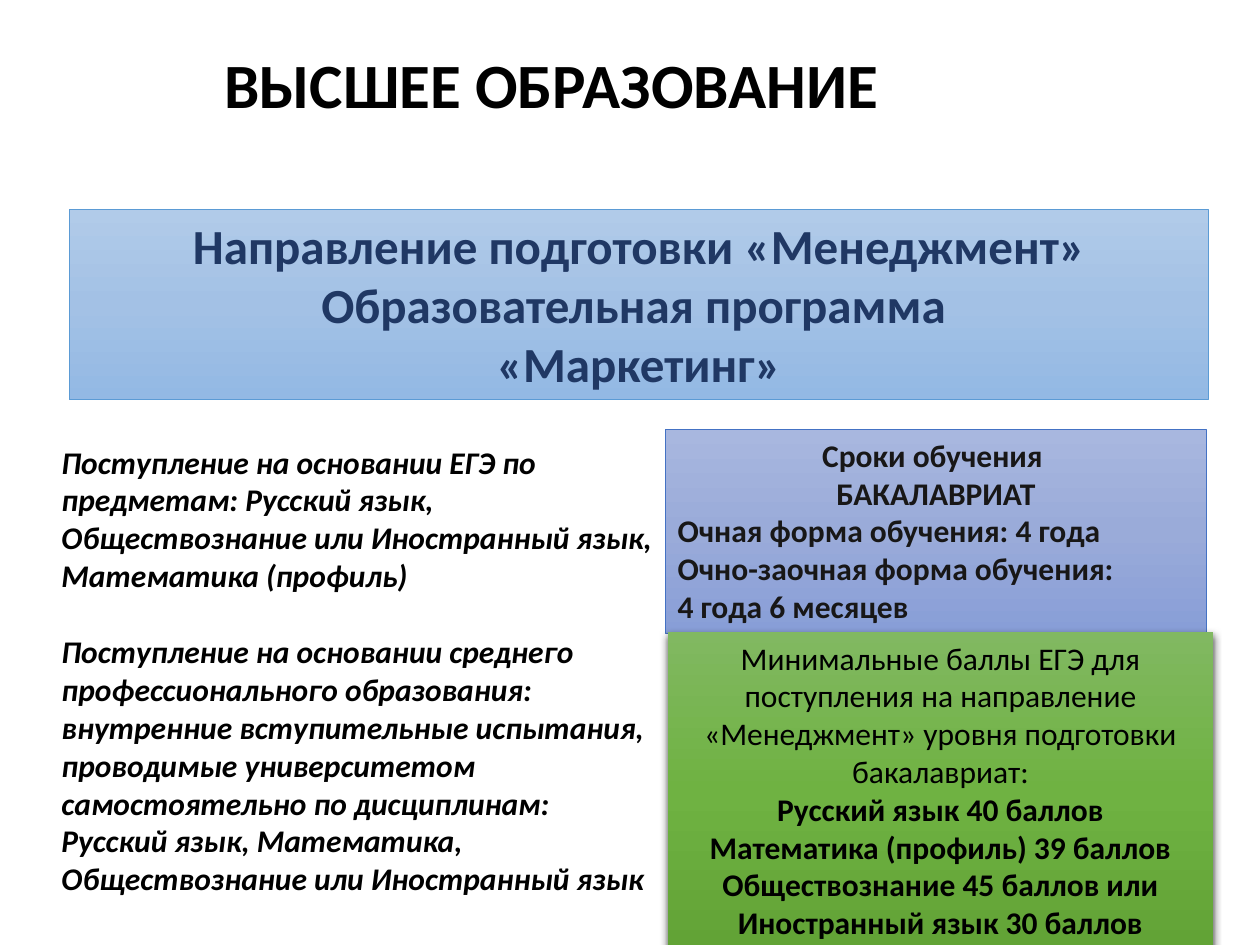
from copy import deepcopy

from lxml import etree
from pptx import Presentation
from pptx import util as u
from pptx.dml.color import RGBColor
from pptx.enum import shapes, text
from pptx.oxml import ns

COLORS = {
    "black": "000000",
    "ink": "181717",
    "navy": "203864",
    "sky_line": "5B9BD5",
    "indigo_line": "4472C4",
}
GRADIENTS = {
    "sky": ("B1CBE9", "A3C1E5", "93B9E4"),
    "indigo": ("A8B7DF", "9AABD9", "889ED7"),
    "green": ("81B861", "6FB242", "62A336"),
}


def write(frame, words, size=18, color="black", bold=True, italic=False,
          align=text.PP_ALIGN.CENTER, before=0, spacing=None):
    first = frame.paragraphs[0]
    paragraph = first if not first.runs else frame.add_paragraph()
    paragraph.alignment = align
    paragraph.space_before = u.Pt(before)
    if spacing:
        paragraph.line_spacing = spacing
    run = paragraph.add_run()
    run.text = words
    font = run.font
    font.name = "Calibri"
    font.size = u.Pt(size)
    font.bold = bold
    font.italic = italic
    font.color.rgb = RGBColor.from_string(COLORS[color])


class SlideBuilder:
    def __init__(self, slide):
        self.slide = slide

    def text_box(self, left, top, width, height, anchor=text.MSO_ANCHOR.TOP):
        box = self.slide.shapes.add_textbox(*map(u.Cm, (left, top, width, height)))
        return self.prepare(box.text_frame, anchor)

    def panel(self, left, top, width, height, gradient, line=None, shadow=False):
        panel = self.slide.shapes.add_shape(
            shapes.MSO_SHAPE.RECTANGLE, *map(u.Cm, (left, top, width, height)))
        panel.shadow.inherit = False
        self.fill_gradient(panel, GRADIENTS[gradient])
        if line:
            panel.line.color.rgb = RGBColor.from_string(COLORS[line])
            panel.line.width = u.Pt(0.5)
        else:
            panel.line.fill.background()
        if shadow:
            self.drop_shadow(panel)
        return self.prepare(panel.text_frame, text.MSO_ANCHOR.TOP)

    def prepare(self, frame, anchor):
        frame.word_wrap = True
        frame.vertical_anchor = anchor
        return frame

    def fill_gradient(self, panel, colors):
        panel.fill.gradient()
        panel.fill.gradient_angle = 270
        stop_list = panel.element.spPr.find(ns.qn("a:gradFill")).find(ns.qn("a:gsLst"))
        stop_list.insert(1, deepcopy(stop_list[0]))
        for index, (stop, color) in enumerate(zip(panel.fill.gradient_stops, colors)):
            stop.position = index / 2
            stop.color.rgb = RGBColor.from_string(color)

    def drop_shadow(self, panel):
        effects = panel.element.spPr.find(ns.qn("a:effectLst"))
        shadow = etree.SubElement(
            effects, ns.qn("a:outerShdw"), blurRad=str(u.Pt(4.5)),
            dist=str(u.Pt(1.5)), dir="5400000", algn="ctr", rotWithShape="0")
        color = etree.SubElement(shadow, ns.qn("a:srgbClr"), val=COLORS["black"])
        etree.SubElement(color, ns.qn("a:alpha"), val="63000")


def main():
    deck = Presentation()
    deck.slide_width, deck.slide_height = u.Cm(25.4), u.Cm(19.05)
    builder = SlideBuilder(deck.slides.add_slide(deck.slide_layouts[6]))

    heading = builder.text_box(0.28, 0.28, 21.67, 3, anchor=text.MSO_ANCHOR.MIDDLE)
    write(heading, "ВЫСШЕЕ ОБРАЗОВАНИЕ", size=36, spacing=0.9)

    duration = builder.panel(13.41, 8.66, 10.92, 4.11, "indigo", line="indigo_line")
    for words in ("Сроки обучения ", "БАКАЛАВРИАТ"):
        write(duration, words, color="ink")
    for words in ("Очная форма обучения: 4 года",
                  "Очно-заочная форма обучения:",
                  "4 года 6 месяцев"):
        write(duration, words, color="ink", align=text.PP_ALIGN.LEFT)

    scores = builder.panel(13.46, 12.75, 11, 6.4, "green", shadow=True)
    write(scores, "Минимальные баллы ЕГЭ для поступления на направление "
                  "«Менеджмент» уровня подготовки бакалавриат:", bold=False)
    for words in ("Русский язык 40 баллов",
                  "Математика (профиль) 39 баллов",
                  "Обществознание 45 баллов или",
                  "Иностранный язык 30 баллов"):
        write(scores, words)

    admission = builder.text_box(0.99, 8.8, 12.73, 10)
    for words, before in (
        ("Поступление на основании ЕГЭ по предметам: Русский язык, "
         "Обществознание или Иностранный язык, Математика (профиль)", 0),
        ("Поступление на основании среднего профессионального образования: "
         "внутренние вступительные испытания, проводимые университетом "
         "самостоятельно по дисциплинам:", 22),
        ("Русский язык, Математика, Обществознание или Иностранный язык", 0),
    ):
        write(admission, words, italic=True, align=text.PP_ALIGN.LEFT, before=before)

    program = builder.panel(1.4, 4.22, 22.96, 3.84, "sky", line="sky_line")
    for words in ("Направление подготовки «Менеджмент»",
                  "Образовательная программа ",
                  "«Маркетинг»"):
        write(program, words, size=28, color="navy")

    deck.save("out.pptx")


if __name__ == "__main__":
    main()
